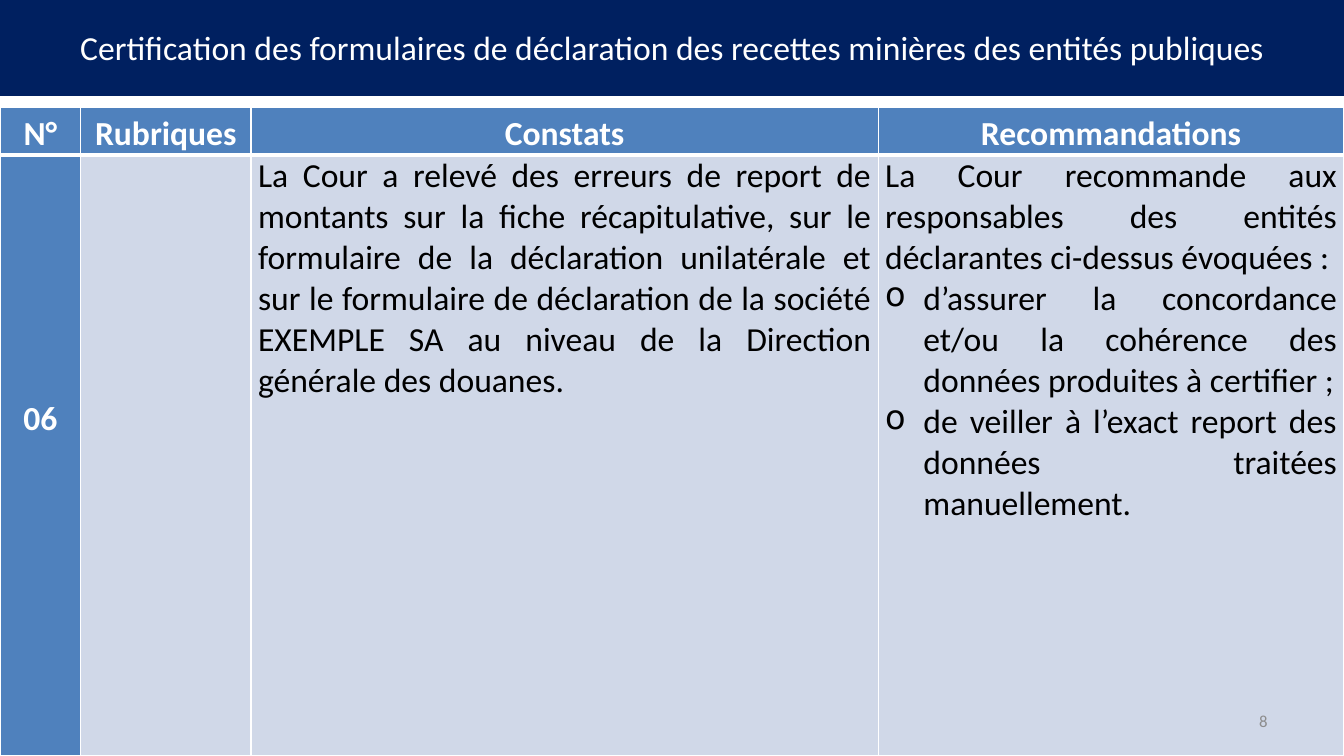
from lxml import etree
from pptx import Presentation
from pptx.dml.color import RGBColor
from pptx.enum.text import MSO_ANCHOR, MSO_AUTO_SIZE, PP_ALIGN
from pptx.oxml.ns import qn
from pptx.util import Inches, Pt

CENTER, JUSTIFY, RIGHT = PP_ALIGN.CENTER, PP_ALIGN.JUSTIFY, PP_ALIGN.RIGHT
MIDDLE, NO_FIT = MSO_ANCHOR.MIDDLE, MSO_AUTO_SIZE.NONE

COLORS = {"navy": "002060", "blue": "4F81BD", "pale": "D0D8E8",
          "white": "FFFFFF", "black": "000000", "gray": "8C8C8C"}
FONT = "Calibri"
WIDTH, HEIGHT = 13.33, 7.5
TITLE_HEIGHT = 0.94
TABLE_TOP = 1.07
COLUMNS = [0.8, 1.69, 6.22, 4.62]
HEADER_HEIGHT = 0.47
BODY_HEIGHT = HEIGHT - TABLE_TOP - HEADER_HEIGHT
NUMBER_OFFSET = 5 * HEADER_HEIGHT  # the row number stands five lines down
BULLET_INDENT = 0.38

TITLE = ("Certification des formulaires de déclaration des recettes minières "
         "des entités publiques")
HEADERS = ["N°", "Rubriques", "Constats", "Recommandations"]
ROW_NUMBER = "06"
FINDING = ("La Cour a relevé des erreurs de report de montants sur la fiche "
           "récapitulative, sur le formulaire de la déclaration unilatérale et sur "
           "le formulaire de déclaration de la société EXEMPLE SA au niveau de la "
           "Direction générale des douanes.")
ADVICE_INTRO = ("La Cour recommande aux responsables des entités déclarantes "
                "ci-dessus évoquées :")
ADVICE = ["d’assurer la concordance et/ou la cohérence des données produites à certifier ;",
          "de veiller à l’exact report des données traitées manuellement."]


def color(name):
    return RGBColor.from_string(COLORS[name])


def write(para, text, size=24, ink="black", bold=False, align=JUSTIFY, spacing=None):
    para.alignment = align
    if spacing:
        para.line_spacing = spacing
    span = para.add_run()
    span.text = text
    span.font.name = FONT
    span.font.size = Pt(size)
    span.font.bold = bold
    span.font.color.rgb = color(ink)


def add_bullet(para, char="o"):
    properties = para._p.get_or_add_pPr()
    properties.set("marL", str(Inches(BULLET_INDENT)))
    properties.set("indent", str(-Inches(BULLET_INDENT)))
    etree.SubElement(properties, qn("a:buChar"), char=char)


def set_borders(cell, top, bottom):
    """Draw white borders, 1 pt at the sides and the given points above and below."""
    properties = cell._tc.get_or_add_tcPr()
    sides = {"a:lnL": 1, "a:lnR": 1, "a:lnT": top, "a:lnB": bottom}
    for index, (tag, points) in enumerate(sides.items()):
        line = etree.Element(qn(tag), w=str(Pt(points)))
        fill = etree.SubElement(line, qn("a:solidFill"))
        etree.SubElement(fill, qn("a:srgbClr"), val=COLORS["white"])
        properties.insert(index, line)


def style_cell(cell, fill, top=1, bottom=1):
    cell.margin_left = cell.margin_right = Inches(0.07)
    cell.margin_top = cell.margin_bottom = 0
    cell.fill.solid()
    cell.fill.fore_color.rgb = color(fill)
    set_borders(cell, top, bottom)


def add_title(page):
    box = page.shapes.title
    box.left, box.top = 0, 0
    box.width, box.height = Inches(WIDTH), Inches(TITLE_HEIGHT)
    box.fill.solid()
    box.fill.fore_color.rgb = color("navy")
    box.line.color.rgb = color("navy")
    box.line.width = Pt(2)
    frame = box.text_frame
    frame.auto_size = NO_FIT
    frame.vertical_anchor = MIDDLE
    write(frame.paragraphs[0], TITLE, ink="white", align=CENTER)


def add_findings_table(page):
    table = page.shapes.add_table(
        2, len(COLUMNS), 0, Inches(TABLE_TOP), Inches(WIDTH),
        Inches(HEADER_HEIGHT + BODY_HEIGHT)).table
    table.first_col = True
    table.rows[0].height = Inches(HEADER_HEIGHT)
    table.rows[1].height = Inches(BODY_HEIGHT)
    heading = {"ink": "white", "bold": True, "align": CENTER, "spacing": 1.15}
    for index, (width, header) in enumerate(zip(COLUMNS, HEADERS)):
        table.columns[index].width = Inches(width)
        style_cell(table.cell(0, index), "blue", bottom=3)
        write(table.cell(0, index).text_frame.paragraphs[0], header, **heading)
        style_cell(table.cell(1, index), "pale" if index else "blue", top=3)

    number, _, finding, advice = table.rows[1].cells
    number.margin_top = Inches(NUMBER_OFFSET)
    write(number.text_frame.paragraphs[0], ROW_NUMBER, **heading)
    write(finding.text_frame.paragraphs[0], FINDING)
    write(advice.text_frame.paragraphs[0], ADVICE_INTRO)
    for item in ADVICE:
        para = advice.text_frame.add_paragraph()
        write(para, item)
        add_bullet(para)


def add_page_number(page, number):
    box = page.shapes.add_textbox(Inches(9.56), Inches(6.95), Inches(3.11), Inches(0.4))
    frame = box.text_frame
    frame.word_wrap = True
    frame.vertical_anchor = MIDDLE
    write(frame.paragraphs[0], number, size=12, ink="gray", align=RIGHT)


def main():
    deck = Presentation()
    deck.slide_width, deck.slide_height = Inches(WIDTH), Inches(HEIGHT)
    page = deck.slides.add_slide(deck.slide_layouts.get_by_name("Title Only"))
    add_title(page)
    add_findings_table(page)
    add_page_number(page, "8")
    deck.save("out.pptx")


if __name__ == "__main__":
    main()
